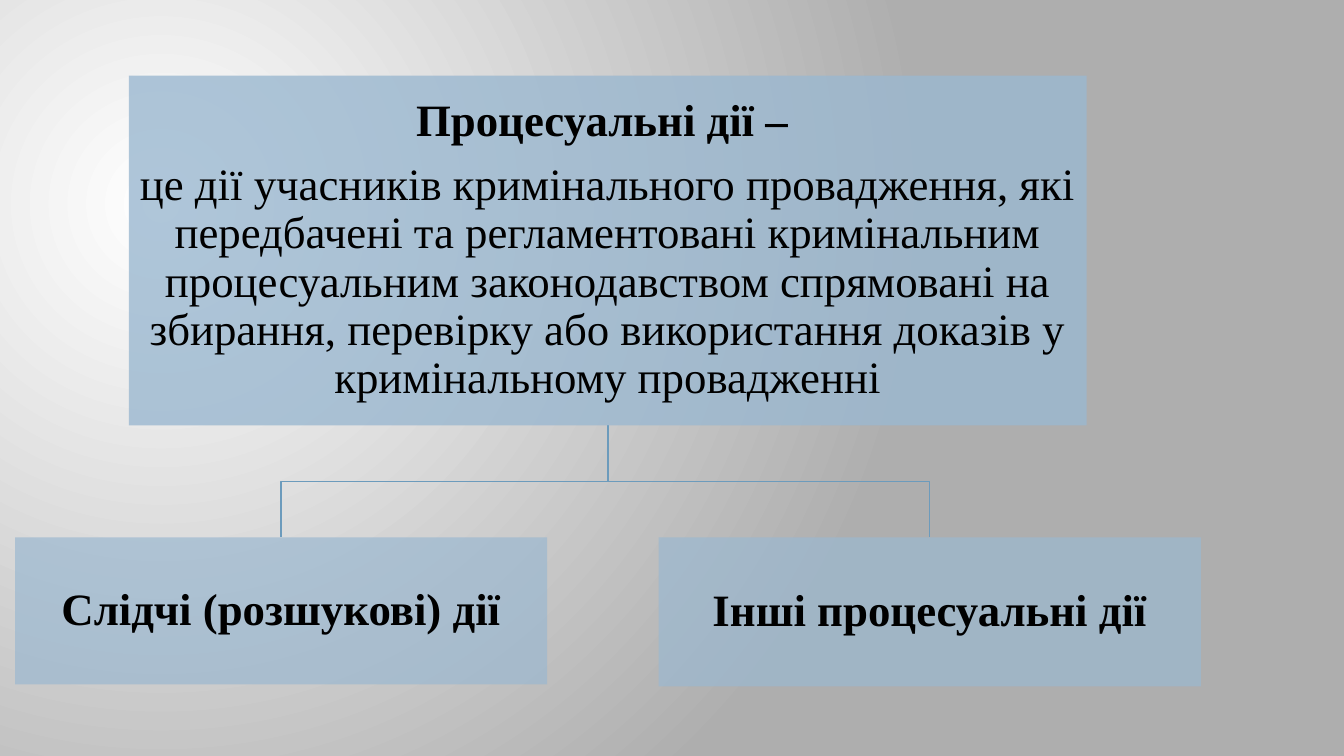
from dataclasses import dataclass

import pptx
import pptx.dml.color
import pptx.enum.shapes
import pptx.enum.text
import pptx.oxml
import pptx.oxml.ns
import pptx.util

COLORS = {"box": "9BB8D0", "line": "6C9BBC", "text": "000000",
          "glow": "FFFFFF", "edge": "AEAEAE"}
FONT = "Times New Roman"
SIZE = 32
W, H = pptx.util.Inches(13.33), pptx.util.Inches(7.5)


@dataclass
class Box:
    """A text box placed in percent of the slide's width and height."""
    left: float
    top: float
    width: float
    height: float
    opacity: int
    heading: str
    body: str = ""

    @property
    def center(self) -> float:
        return self.left + self.width / 2

    @property
    def bottom(self) -> float:
        return self.top + self.height


DEFINITION = Box(
    9.6, 10, 71.25, 46.27, 80, "Процесуальні дії – ",
    "це дії учасників кримінального провадження, які передбачені та "
    "регламентовані кримінальним процесуальним законодавством спрямовані на "
    "збирання, перевірку або використання доказів у кримінальному провадженні")
KINDS = [
    Box(1.12, 71.07, 39.6, 19.47, 70, "Слідчі (розшукові) дії"),
    Box(49, 71.07, 40.35, 19.73, 70, "Інші процесуальні дії"),
]


def rgb(name: str) -> pptx.dml.color.RGBColor:
    return pptx.dml.color.RGBColor.from_string(COLORS[name])


def x(share: float) -> int:
    return round(W * share / 100)


def y(share: float) -> int:
    return round(H * share / 100)


def paint_background(s) -> None:
    fill = s.background.fill
    fill.gradient()
    for stop, name, position in zip(fill.gradient_stops, ("glow", "edge"), (0, 1)):
        stop.color.rgb = rgb(name)
        stop.position = position
    # Circular gradient instead of the linear default
    lin = s.background._cSld.find(".//" + pptx.oxml.ns.qn("a:lin"))
    circle = pptx.oxml.parse_xml(
        f'<a:path {pptx.oxml.ns.nsdecls("a")} path="circle">'
        '<a:fillToRect l="50000" t="55000" r="125000" b="100000"/></a:path>')
    lin.getparent().replace(lin, circle)


def draw_link(s, parent: Box, child: Box) -> None:
    middle = (parent.bottom + child.top) / 2
    builder = s.shapes.build_freeform(x(parent.center), y(parent.bottom))
    builder.add_line_segments(
        [(x(parent.center), y(middle)), (x(child.center), y(middle)),
         (x(child.center), y(child.top))], close=False)
    sp = builder.convert_to_shape()
    sp.shadow.inherit = False
    sp.fill.background()
    sp.line.color.rgb = rgb("line")
    sp.line.width = pptx.util.Pt(1)


def draw_box(s, box: Box) -> None:
    sp = s.shapes.add_shape(pptx.enum.shapes.MSO_SHAPE.RECTANGLE, x(box.left),
                            y(box.top), x(box.width), y(box.height))
    sp.shadow.inherit = False
    sp.line.fill.background()
    sp.fill.solid()
    sp.fill.fore_color.rgb = rgb("box")
    color = sp._element.spPr.find(".//" + pptx.oxml.ns.qn("a:srgbClr"))
    color.append(pptx.oxml.parse_xml(
        f'<a:alpha {pptx.oxml.ns.nsdecls("a")} val="{box.opacity * 1000}"/>'))

    tf = sp.text_frame
    tf.word_wrap = True
    tf.vertical_anchor = pptx.enum.text.MSO_ANCHOR.MIDDLE
    tf.margin_left = tf.margin_right = pptx.util.Inches(0.02)
    tf.margin_top = tf.margin_bottom = pptx.util.Inches(0.02)
    tf.text = f"{box.heading}\n{box.body}" if box.body else box.heading
    for i, p in enumerate(tf.paragraphs):
        p.alignment = pptx.enum.text.PP_ALIGN.CENTER
        p.line_spacing = 0.9
        p.space_after = pptx.util.Pt(SIZE * 0.35)
        for r in p.runs:
            r.font.name = FONT
            r.font.size = pptx.util.Pt(SIZE)
            r.font.bold = i == 0
            r.font.color.rgb = rgb("text")


def main() -> None:
    prs = pptx.Presentation()
    prs.slide_width, prs.slide_height = W, H
    s = prs.slides.add_slide(prs.slide_layouts[6])
    paint_background(s)

    # Links lie behind the boxes
    for kind in reversed(KINDS):
        draw_link(s, DEFINITION, kind)

    # Definition above, its two kinds below
    for box in [DEFINITION, *KINDS]:
        draw_box(s, box)

    prs.save("out.pptx")


if __name__ == "__main__":
    main()
